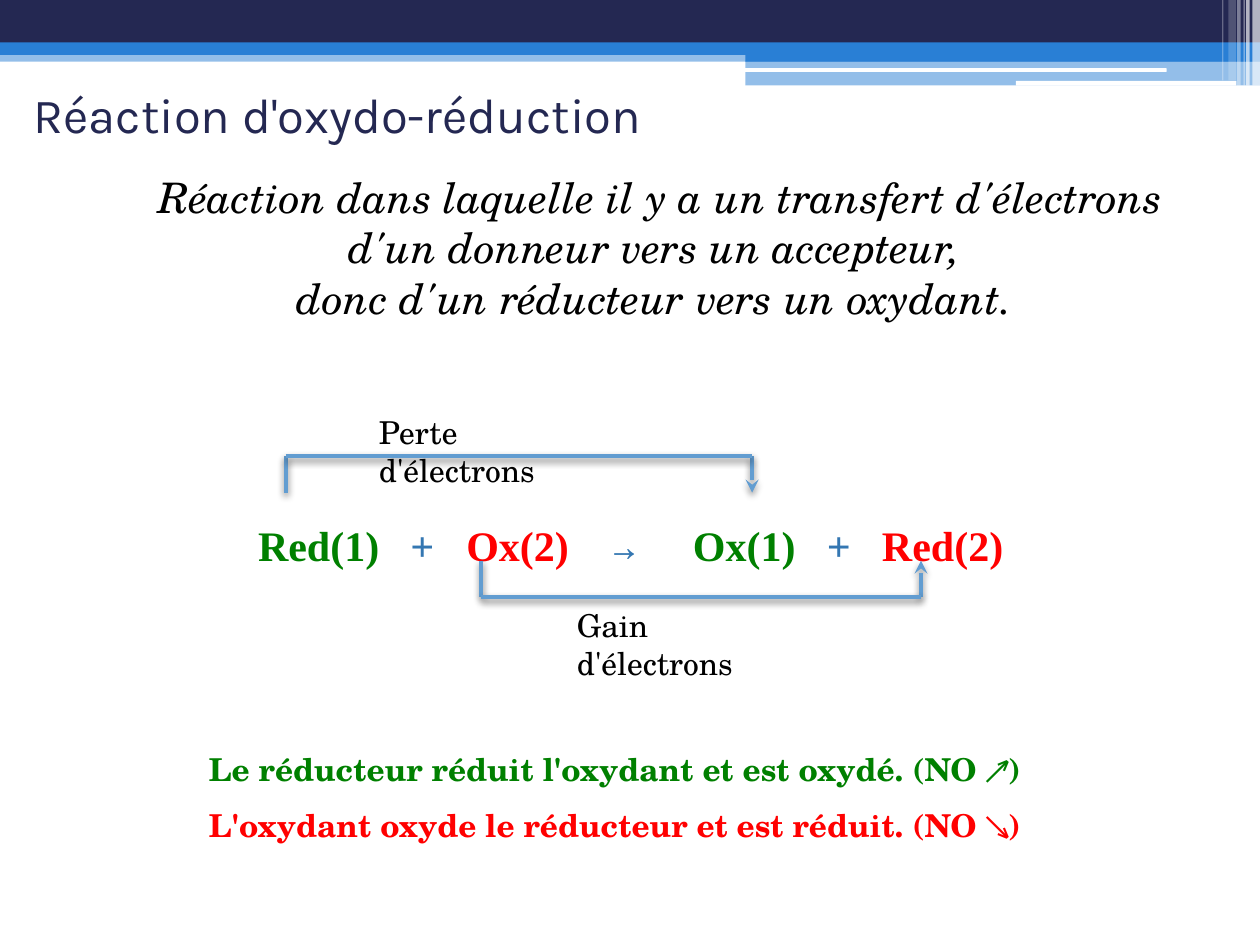
import dataclasses

import pptx
import pptx.dml.color
import pptx.enum.dml
import pptx.enum.shapes
import pptx.enum.text
import pptx.oxml
import pptx.oxml.ns
import pptx.util

Pt = pptx.util.Pt
SHAPE = pptx.enum.shapes.MSO_SHAPE
ALIGN = pptx.enum.text.PP_ALIGN
ANCHOR = pptx.enum.text.MSO_ANCHOR
NAMESPACE = pptx.oxml.ns.nsdecls("a")


@dataclasses.dataclass(frozen=True)
class Theme:
    navy: str = "242852"
    blue: str = "297FD5"
    bracket: str = "629DD1"
    symbol: str = "3477B2"
    green: str = "008000"
    red: str = "FF0000"
    black: str = "000000"
    white: str = "FFFFFF"
    title_font: str = "Karla"
    body_font: str = "TeX Gyre Schola"
    formula_font: str = "Times New Roman"
    arrow_font: str = "Noto Sans Mono"
    title_size: int = 28
    body_size: int = 24
    note_size: int = 18


def color(value):
    return pptx.dml.color.RGBColor.from_string(value)


def set_attributes(target, values):
    for name, value in values.items():
        setattr(target, name, value)


class SlideBuilder:
    def __init__(self, slide, theme):
        self.slide = slide
        self.theme = theme

    def bar(self, left, top, width, height, fill, opacity=100, kind=SHAPE.RECTANGLE):
        shape = self.slide.shapes.add_shape(kind, Pt(left), Pt(top), Pt(width), Pt(height))
        shape.shadow.inherit = False
        shape.line.fill.background()
        shape.fill.solid()
        shape.fill.fore_color.rgb = color(fill)
        if opacity < 100:
            fill_color = shape._element.spPr.find(".//" + pptx.oxml.ns.qn("a:srgbClr"))
            fill_color.append(pptx.oxml.parse_xml(f'<a:alpha {NAMESPACE} val="{opacity * 1000}"/>'))

    def fill_paragraph(self, paragraph, runs, paragraph_format):
        """Each run is a pair of text and font values."""
        set_attributes(paragraph, paragraph_format)
        for text, values in runs:
            run = paragraph.add_run()
            run.text = text
            font_values = dict(values)
            run.font.color.rgb = color(font_values.pop("color"))
            set_attributes(run.font, font_values)

    def title(self, text, box):
        shape = self.slide.shapes.title
        set_attributes(shape, dict(zip(("left", "top", "width", "height"), map(Pt, box))))
        set_attributes(shape.text_frame, {
            "vertical_anchor": ANCHOR.MIDDLE,
            "word_wrap": True,
            "auto_size": pptx.enum.text.MSO_AUTO_SIZE.NONE,
        })
        font = {"name": self.theme.title_font, "size": Pt(self.theme.title_size),
                "color": self.theme.navy}
        self.fill_paragraph(shape.text_frame.paragraphs[0], [(text, font)],
                            {"alignment": ALIGN.LEFT})

    def text(self, box, paragraphs, tabs=(), **paragraph_format):
        frame = self.slide.shapes.add_textbox(*map(Pt, box)).text_frame
        frame.word_wrap = True
        for index, runs in enumerate(paragraphs):
            paragraph = frame.add_paragraph() if index else frame.paragraphs[0]
            self.fill_paragraph(paragraph, runs, paragraph_format)
            if tabs:
                stops = "".join(f'<a:tab pos="{int(Pt(tab))}" algn="l"/>' for tab in tabs)
                paragraph._p.get_or_add_pPr().append(
                    pptx.oxml.parse_xml(f"<a:tabLst {NAMESPACE}>{stops}</a:tabLst>"))

    def line(self, group, start, end, arrow=False):
        connector = group.shapes.add_connector(
            pptx.enum.shapes.MSO_CONNECTOR.STRAIGHT, *map(Pt, (*start, *end)))
        connector.line.color.rgb = color(self.theme.bracket)
        connector.line.width = Pt(2.5)
        if arrow:
            connector.line._get_or_add_ln().append(
                pptx.oxml.parse_xml(f'<a:headEnd {NAMESPACE} type="stealth"/>'))
        connector._element.spPr.append(pptx.oxml.parse_xml(
            f'<a:effectLst {NAMESPACE}><a:outerShdw blurRad="{int(Pt(4))}" '
            f'dist="{int(Pt(2))}" dir="5400000" rotWithShape="0">'
            f'<a:srgbClr val="{self.theme.black}"><a:alpha val="45000"/></a:srgbClr>'
            '</a:outerShdw></a:effectLst>'))

    def bracket(self, left, right, foot, beam):
        """Two legs and a beam; the right foot carries the arrowhead."""
        group = self.slide.shapes.add_group_shape()
        self.line(group, (left, foot), (left, beam))
        self.line(group, (right, foot), (right, beam), arrow=True)
        self.line(group, (left, beam), (right, beam))


def main():
    presentation = pptx.Presentation()
    presentation.slide_width, presentation.slide_height = Pt(720), Pt(540)
    theme = Theme()
    builder = SlideBuilder(presentation.slides.add_slide(presentation.slide_layouts[5]), theme)

    # Header bands
    for left, top, width, height, fill, opacity in (
        (0, 28.8, 720, 6.5, theme.blue, 50),
        (0, 0, 720, 24.5, theme.navy, 100),
        (0, 24.2, 720, 7.2, theme.blue, 100),
        (426, 28, 294, 7.2, theme.blue, 100),
        (426, 34.6, 294, 14.2, theme.blue, 50),
    ):
        builder.bar(left, top, width, height, fill, opacity)
    for left, top, width, height in ((425.5, 39, 241.2, 2.1), (580.5, 46.2, 126, 2.7)):
        builder.bar(left, top, width, height, theme.white, kind=SHAPE.ROUNDED_RECTANGLE)

    # Pale stripes at the right edge
    for left, width, height, opacity in (
        (715.7, 4.3, 49, 65), (712.1, 2, 49, 65), (710.6, 0.7, 49, 60),
        (707, 2, 49, 40), (702, 4.3, 46, 20), (698.4, 0.7, 46, 30),
    ):
        builder.bar(left, 0, width, height, theme.white, opacity)

    # Title and definition
    builder.title("Réaction d'oxydo-réduction", (12.2, 36, 648, 58.3))
    definition = {"name": theme.body_font, "size": Pt(theme.body_size),
                  "italic": True, "color": theme.black}
    builder.text((82, 94.3, 590.4, 123.8), [
        [("Réaction dans laquelle il y a un transfert d'électrons "
          "d'un donneur vers un accepteur, ", definition)],
        [("donc d'un réducteur vers un oxydant. ", definition)],
    ], alignment=ALIGN.CENTER)

    # Equation, its terms set on tab stops
    formula = {"name": theme.formula_font, "size": Pt(theme.body_size), "bold": True}
    green, red, symbol = (formula | {"color": value}
                          for value in (theme.green, theme.red, theme.symbol))
    builder.text((140.4, 272.9, 446.4, 51.8), [[
        ("Red(1)", green), ("\t+\t", symbol), ("Ox(2)", red),
        ("\t→\t", symbol | {"name": theme.arrow_font}),
        ("Ox(1)", green), ("\t+\t", symbol), ("Red(2)", red),
    ]], tabs=(87, 119, 202, 248.5, 325, 356.5), line_spacing=1.7)

    # Electron transfer brackets and labels
    builder.bracket(163.4, 429.8, foot=281.5, beam=260.6)
    builder.bracket(275, 526.3, foot=320.4, beam=341.3)
    note = {"name": theme.body_font, "size": Pt(theme.note_size)}
    label = note | {"color": theme.black}
    builder.text((209.5, 232.6, 149, 28.8), [[("Perte d'électrons", label)]])
    builder.text((322.6, 342.7, 144.7, 28.8), [[("Gain d'électrons", label)]])

    # Conclusions
    builder.text((112.3, 414, 485.3, 72.7), [
        [(text, note | {"bold": True, "color": value})] for text, value in (
            ("Le réducteur réduit l'oxydant et est oxydé. (NO ↗)", theme.green),
            ("L'oxydant oxyde le réducteur et est réduit. (NO ↘)", theme.red),
        )
    ], line_spacing=1.5)

    presentation.save("out.pptx")


if __name__ == "__main__":
    main()
